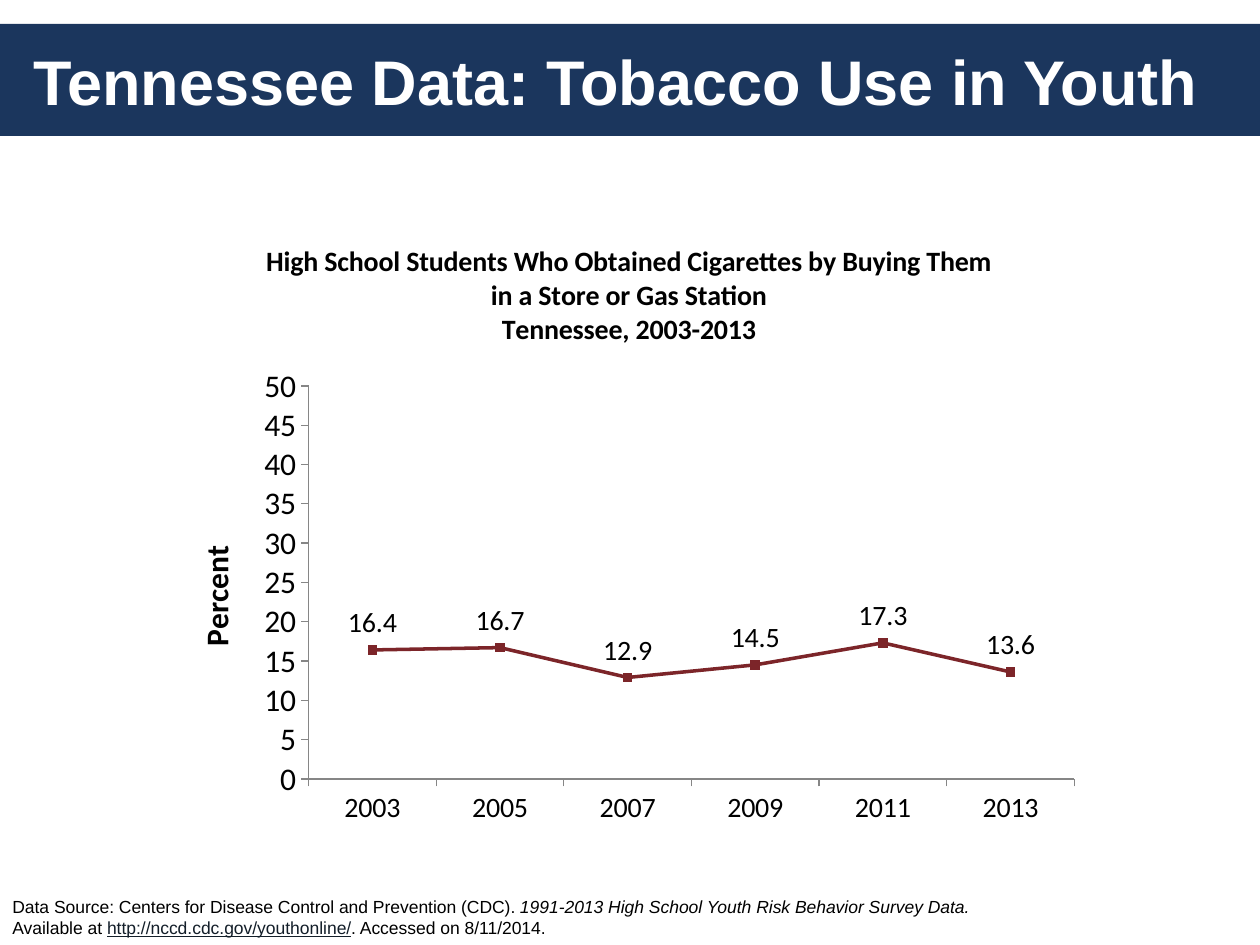
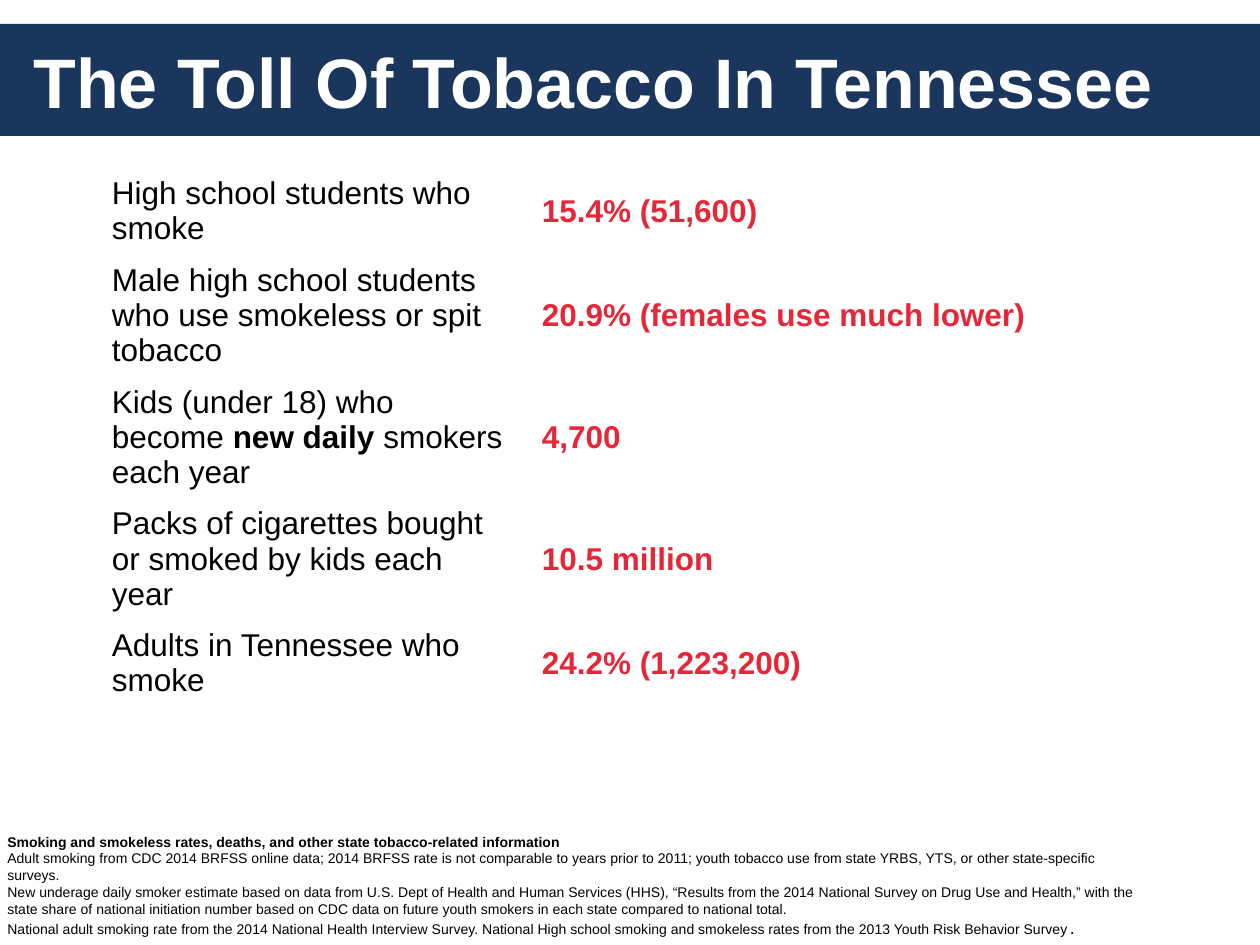
"""Build two slides on tobacco use in Tennessee: a trend chart and a table of figures."""
import pptx
import pptx.chart.data
import pptx.dml.color
import pptx.enum.chart
import pptx.enum.shapes
import pptx.enum.text
import pptx.oxml
import pptx.util

NAVY, WHITE, BLACK, RED = "1B365D", "FFFFFF", "000000", "E52737"
MAROON, LINK, GREY = "7C2529", "131E29", "868686"
BAND = (0, 24, 1260, 112)
TITLE = (21, 24, 1218, 113)

TREND_TITLE = "Tennessee Data: Tobacco Use in Youth"
CHART_TITLE = [
    "High School Students Who Obtained Cigarettes by Buying Them in a Store or Gas Station",
    "Tennessee, 2003-2013",
]
CHART = (166, 220, 926, 617)
PLOT = (309, 386, 766, 393)
YEARS = ["2003", "2005", "2007", "2009", "2011", "2013"]
PERCENTS = [16.4, 16.7, 12.9, 14.5, 17.3, 13.6]
TREND_SOURCE = [
    ("Data Source: Centers for Disease Control and Prevention (CDC). ", {}),
    ("1991-2013 High School Youth Risk Behavior Survey Data. \n", {"italic": True}),
    ("Available at ", {}),
    ("http://nccd.cdc.gov/youthonline/", {"underline": True, "color": LINK}),
    (". Accessed on 8/11/2014.", {}),
]

TOLL_TITLE = "The Toll Of Tobacco In Tennessee"
TABLE = (94, 168, 1103)
COLUMNS = (430, 673)
LINE_HEIGHT, ROW_PADDING = 35, 16
TOLL = [
    (2, [("High school students who smoke", {})], "15.4% (51,600)"),
    (3, [("Male high school students who use smokeless or spit tobacco", {})],
     "20.9% (females use much lower)"),
    (3, [("Kids (under 18) who become ", {}), ("new daily ", {"bold": True}),
         ("smokers each year", {})], "4,700"),
    (3, [("Packs of cigarettes bought or smoked by kids each year", {})], "10.5 million"),
    (2, [("Adults in Tennessee who smoke", {})], "24.2% (1,223,200)"),
]
TOLL_SOURCE = [
    ("Smoking and smokeless rates, deaths, and other state tobacco-related information\n",
     {"bold": True}),
    ("Adult smoking from CDC 2014 BRFSS online data; 2014 BRFSS rate is not comparable to "
     "years prior to 2011; youth tobacco use from state YRBS, YTS, or other state-specific "
     "surveys.\n"
     "New underage daily smoker estimate based on data from U.S. Dept of Health and Human "
     "Services (HHS), “Results from the 2014 National Survey on Drug Use and Health,” with "
     "the state share of national initiation number based on CDC data on future youth smokers "
     "in each state compared to national total.\n"
     "National adult smoking rate from the 2014 National Health Interview Survey. National "
     "High school smoking and smokeless rates from the 2013 Youth Risk Behavior Survey", {}),
    (".", {"size": 10}),
]


def px(*lengths):
    return [round(length * 914400 / 126) for length in lengths]


def rgb(value):
    return pptx.dml.color.RGBColor.from_string(value)


def set_font(font, size=None, color=None, name=None, **flags):
    if size:
        font.size = pptx.util.Pt(size)
    if color:
        font.color.rgb = rgb(color)
    if name:
        font.name = name
    for flag, value in flags.items():
        setattr(font, flag, value)


def paint(shape, color):
    shape.fill.solid()
    shape.fill.fore_color.rgb = rgb(color)


def write(para, spans, size, color=BLACK, **flags):
    set_font(para.font, size, color, "Arial", **flags)
    for text, style in spans:
        for number, line in enumerate(text.split("\n")):
            if number:
                para.add_line_break()
            if line:
                span = para.add_run()
                span.text = line
                set_font(span.font, **style)


def add_page(deck, title, size):
    page = deck.slides.add_slide(deck.slide_layouts[5])
    band = page.shapes.add_shape(pptx.enum.shapes.MSO_SHAPE.RECTANGLE, *px(*BAND))
    band.shadow.inherit = False
    paint(band, NAVY)
    band.line.fill.background()
    page.shapes.title._element.addprevious(band._element)
    heading = page.shapes.title
    heading.left, heading.top, heading.width, heading.height = px(*TITLE)
    heading.text_frame.vertical_anchor = pptx.enum.text.MSO_ANCHOR.MIDDLE
    para = heading.text_frame.paragraphs[0]
    para.alignment = pptx.enum.text.PP_ALIGN.LEFT
    write(para, [(title, {})], size, WHITE, bold=True)
    return page


def add_source(page, place, spans, size):
    box = page.shapes.add_textbox(*px(*place))
    box.text_frame.word_wrap = True
    write(box.text_frame.paragraphs[0], spans, size)


def style_axis(axis, size):
    axis.has_major_gridlines = False
    axis.major_tick_mark = pptx.enum.chart.XL_TICK_MARK.OUTSIDE
    axis.format.line.color.rgb = rgb(GREY)
    axis.format.line.width = pptx.util.Pt(0.75)
    set_font(axis.tick_labels.font, size, BLACK, "Calibri")


def place_plot(chart):
    left, top, width, height = CHART
    fractions = {
        "x": (PLOT[0] - left) / width, "y": (PLOT[1] - top) / height,
        "w": PLOT[2] / width, "h": PLOT[3] / height,
    }
    area = chart._chartSpace.chart.plotArea
    for old in area.findall(pptx.oxml.ns.qn("c:layout")):
        area.remove(old)
    modes = '<c:layoutTarget val="inner"/><c:xMode val="edge"/><c:yMode val="edge"/>'
    sizes = "".join(f'<c:{key} val="{value:.3f}"/>' for key, value in fractions.items())
    area.insert(0, pptx.oxml.parse_xml(
        f'<c:layout {pptx.oxml.ns.nsdecls("c")}>'
        f"<c:manualLayout>{modes}{sizes}</c:manualLayout></c:layout>"))


def add_trend_chart(page):
    data = pptx.chart.data.CategoryChartData(number_format="0.0")
    data.categories = YEARS
    data.add_series("Series 1", PERCENTS)
    chart = page.shapes.add_chart(
        pptx.enum.chart.XL_CHART_TYPE.LINE_MARKERS, *px(*CHART), data).chart
    set_font(chart.font, 18, BLACK, "Calibri")
    chart.has_legend = False
    frame = chart.chart_title.text_frame
    frame.text = "\n".join(CHART_TITLE)
    for para in frame.paragraphs:
        set_font(para.font, 16, BLACK, "Calibri", bold=True)

    style_axis(chart.category_axis, 16)
    axis = chart.value_axis
    style_axis(axis, 18)
    axis.minimum_scale, axis.maximum_scale, axis.major_unit = 0, 50, 5
    axis.tick_labels.number_format = "0"
    axis.tick_labels.number_format_is_linked = False
    axis.axis_title.text_frame.text = "Percent"
    set_font(axis.axis_title.text_frame.paragraphs[0].font, 18, BLACK, "Calibri", bold=True)

    plot = chart.plots[0]
    plot.vary_by_categories = False
    series = plot.series[0]
    series.smooth = False
    series.format.line.color.rgb = rgb(MAROON)
    series.format.line.width = pptx.util.Pt(2)
    series.marker.style = pptx.enum.chart.XL_MARKER_STYLE.SQUARE
    series.marker.size = 5
    paint(series.marker.format, MAROON)
    series.marker.format.line.color.rgb = rgb(MAROON)
    labels = series.data_labels
    labels.show_value = True
    labels.position = pptx.enum.chart.XL_LABEL_POSITION.ABOVE
    set_font(labels.font, 16, BLACK, "Calibri")
    place_plot(chart)


def add_toll_table(page):
    heights = [lines * LINE_HEIGHT + ROW_PADDING for lines, _, _ in TOLL]
    table = page.shapes.add_table(
        len(TOLL), len(COLUMNS), *px(*TABLE, sum(heights))).table
    table.first_row = table.horz_banding = False
    for column, width in zip(table.columns, px(*COLUMNS)):
        column.width = width
    for row, height, (_, label, figure) in zip(table.rows, px(*heights), TOLL):
        row.height = height
        for cell in row.cells:
            paint(cell, WHITE)
            cell.vertical_anchor = pptx.enum.text.MSO_ANCHOR.MIDDLE
            cell.margin_left, cell.margin_right = px(18, 18)
            cell.margin_top, cell.margin_bottom = px(8, 8)
        write(row.cells[0].text_frame.paragraphs[0], label, 18)
        write(row.cells[1].text_frame.paragraphs[0], [(figure, {})], 18, RED, bold=True)


def main():
    deck = pptx.Presentation()
    deck.slide_width, deck.slide_height = px(1260, 945)
    trend = add_page(deck, TREND_TITLE, 36)
    add_source(trend, (0, 890, 1260, 55), TREND_SOURCE, 10)
    add_trend_chart(trend)
    toll = add_page(deck, TOLL_TITLE, 40)
    add_toll_table(toll)
    add_source(toll, (-5, 827, 1160, 118), TOLL_SOURCE, 8)
    deck.save("out.pptx")


if __name__ == "__main__":
    main()
